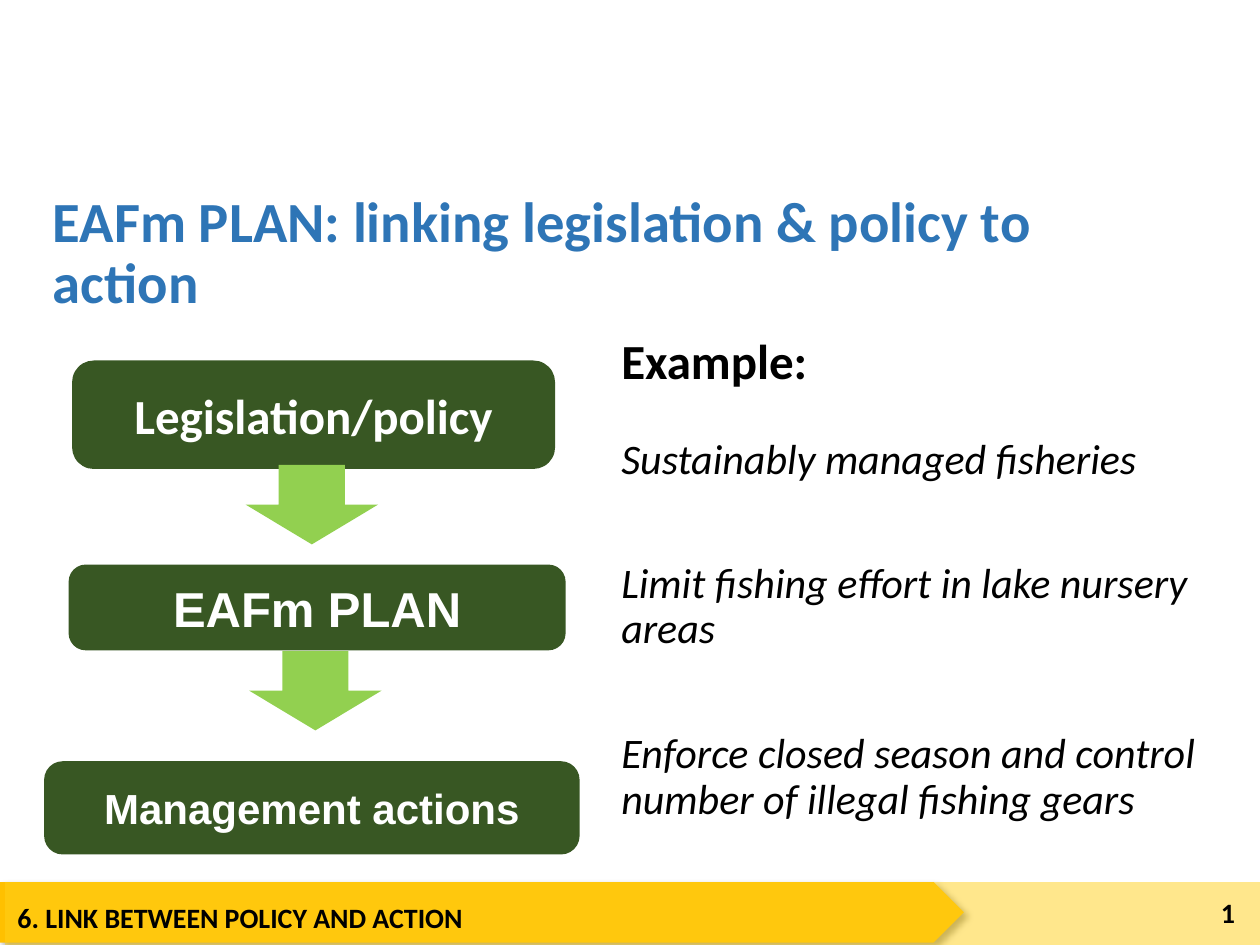
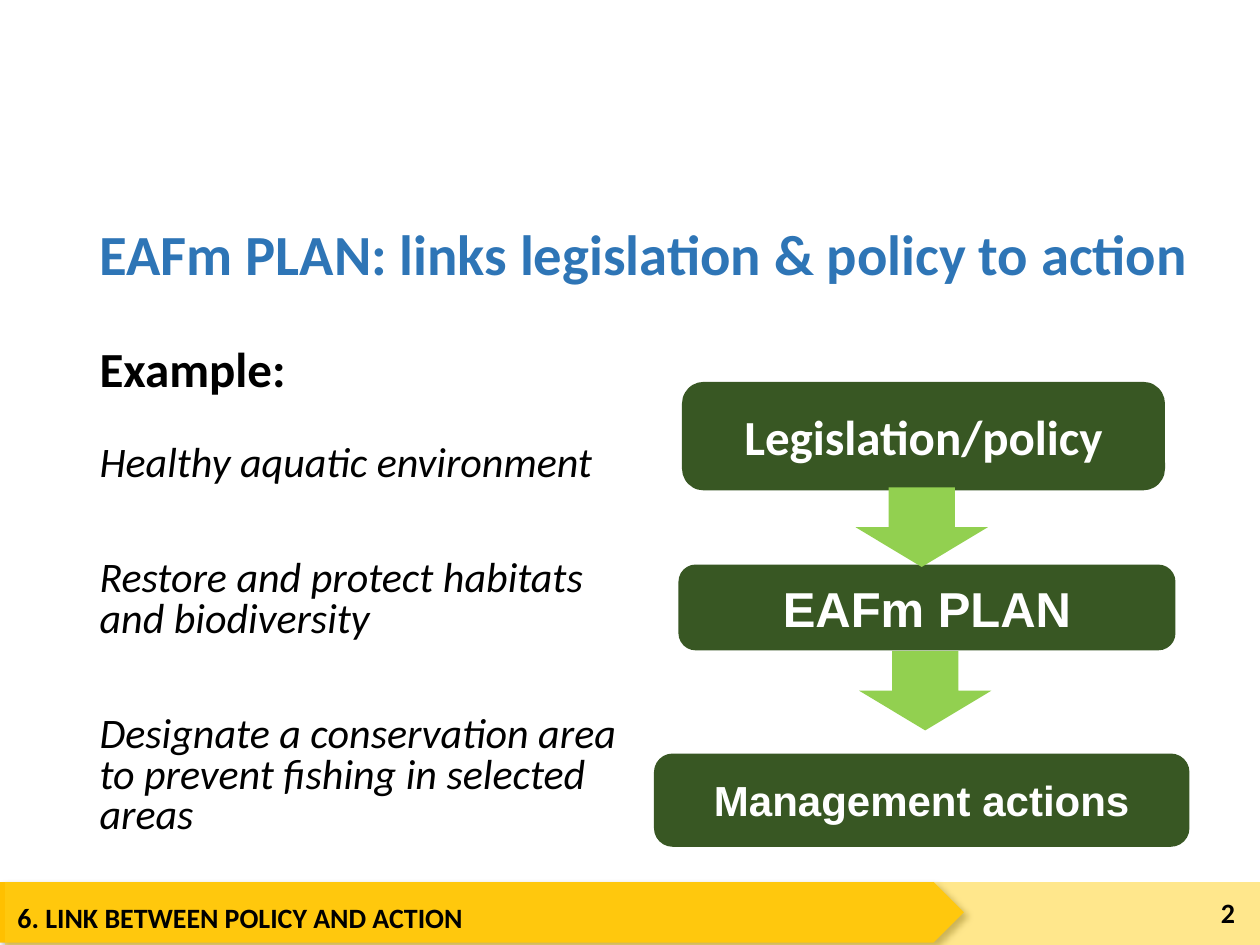
from dataclasses import dataclass
from typing import NamedTuple

from lxml import etree
from pptx import Presentation
from pptx.dml.color import RGBColor
from pptx.enum.shapes import MSO_SHAPE as Preset
from pptx.enum.text import MSO_ANCHOR as Anchor, MSO_AUTO_SIZE as AutoSize, PP_ALIGN as Align
from pptx.oxml import parse_xml
from pptx.oxml.ns import nsdecls, qn
from pptx.shapes.autoshape import Shape
from pptx.slide import Slide
from pptx.text.text import Font
from pptx.util import Pt


@dataclass(frozen=True)
class Theme:
    font: str = "Calibri"
    label_font: str = "Arial"
    title: str = "2E75B6"
    text: str = "000000"
    label: str = "FFFFFF"
    box: str = "385723"
    arrow: str = "92D050"
    band: str = "FFC000"
    band_tint: str = "FFD01B"
    title_size: float = 32.4
    heading_size: float = 28
    body_size: float = 24
    footer_size: float = 16


THEME = Theme()
FOOTER = "6. LINK BETWEEN POLICY AND ACTION"
ARROW_WIDTH, ARROW_HEIGHT = 75.6, 45.4


class Box(NamedTuple):
    left: float
    top: float
    width: float
    height: float


class Stage(NamedTuple):
    label: str
    indent: float
    width: float
    height: float
    font: str
    size: float


STAGES = (
    Stage("Legislation/policy", 16, 276, 62, THEME.font, THEME.heading_size),
    Stage("EAFm PLAN", 14, 284, 49, THEME.label_font, THEME.heading_size),
    Stage("Management actions", 0, 306, 53.3, THEME.label_font, THEME.body_size),
)


@dataclass(frozen=True)
class LinkSlide:
    title: str
    title_box: Box
    examples: tuple[str, ...]
    body_box: Box
    lead_spacing: float
    line_spacing: float
    example_gap: float
    flow_left: float
    stage_tops: tuple[float, ...]
    arrow_tops: tuple[float, ...]


SLIDES = (
    LinkSlide(
        title="EAFm PLAN: linking legislation & policy to action",
        title_box=Box(23, 116, 660, 59),
        examples=(
            "Sustainably managed fisheries",
            "Limit fishing effort in lake nursery areas",
            "Enforce closed season and control number of illegal fishing gears",
        ),
        body_box=Box(347.8, 168.5, 351.4, 338.4),
        lead_spacing=1.5, line_spacing=0.9, example_gap=45.5,
        flow_left=25.2, stage_tops=(206, 322.6, 435), arrow_tops=(265.7, 372),
    ),
    LinkSlide(
        title="EAFm PLAN: links legislation & policy to action",
        title_box=Box(49.7, 117.4, 648.7, 59),
        examples=(
            "Healthy aquatic environment",
            "Restore and protect habitats and biodiversity",
            "Designate a conservation area to prevent fishing in selected areas",
        ),
        body_box=Box(49.7, 176.4, 326.2, 320.4),
        lead_spacing=1.4, line_spacing=0.8, example_gap=43,
        flow_left=373.7, stage_tops=(218.2, 322.6, 430.6), arrow_tops=(278.6, 372),
    ),
)


def style(font: Font, size: float, color: str, name: str = THEME.font,
          bold: bool = True, italic: bool = False) -> None:
    font.name, font.size, font.bold, font.italic = name, Pt(size), bold, italic
    font.color.rgb = RGBColor.from_string(color)


def place(shape: Shape, box: Box) -> None:
    shape.left, shape.top, shape.width, shape.height = map(Pt, box)


def add_block(slide: Slide, preset: Preset, box: Box, color: str) -> Shape:
    """Add a flat filled shape without line or shadow."""
    shape = slide.shapes.add_shape(preset, *map(Pt, box))
    shape.fill.solid()
    shape.fill.fore_color.rgb = RGBColor.from_string(color)
    shape.line.fill.background()
    shape.shadow.inherit = False
    return shape


def add_text_box(slide: Slide, box: Box) -> Shape:
    shape = slide.shapes.add_textbox(*map(Pt, box))
    shape.text_frame.word_wrap = True
    return shape


def add_footer(slide: Slide, number: int) -> None:
    band = add_block(slide, Preset.PENTAGON, Box(0, 504, 550.8, 34.6), THEME.band)
    effects = band._element.spPr.find(qn("a:effectLst"))
    effects.append(parse_xml(
        f'<a:outerShdw {nsdecls("a")} blurRad="{Pt(4)}" dist="{Pt(3)}" dir="2700000">'
        '<a:srgbClr val="000000"><a:alpha val="40000"/></a:srgbClr></a:outerShdw>'))

    tint = add_block(slide, Preset.RECTANGLE, Box(2.9, 504, 717.1, 38), THEME.band_tint)
    color = tint._element.spPr.find(qn("a:solidFill"))[0]
    etree.SubElement(color, qn("a:alpha"), val="50000")

    section = add_text_box(slide, Box(2.9, 511.2, 529.2, 29.5))
    section.text_frame.text = FOOTER
    style(section.text_frame.paragraphs[0].runs[0].font, THEME.footer_size, THEME.text)

    page = add_text_box(slide, Box(660.2, 506.9, 52.6, 28.8))
    page.text_frame.vertical_anchor = Anchor.MIDDLE
    paragraph = page.text_frame.paragraphs[0]
    paragraph.alignment = Align.RIGHT
    run = paragraph.add_run()
    run.text = str(number)
    style(run.font, THEME.footer_size, THEME.text)
    # A slide number field shares the content of a run.
    field = run._r
    field.tag = qn("a:fld")
    field.set("id", "{B6F15528-21DE-4FAA-801E-634DDDAF4B2B}")
    field.set("type", "slidenum")


def fill_title(slide: Slide, content: LinkSlide) -> None:
    title = slide.shapes.title
    place(title, content.title_box)
    frame = title.text_frame
    frame.text = content.title
    frame.auto_size = AutoSize.NONE
    frame.vertical_anchor = Anchor.MIDDLE
    paragraph = frame.paragraphs[0]
    paragraph.alignment, paragraph.line_spacing = Align.LEFT, 0.9
    style(paragraph.runs[0].font, THEME.title_size, THEME.title)


def fill_examples(slide: Slide, content: LinkSlide) -> None:
    body = slide.placeholders[1]
    place(body, content.body_box)
    frame = body.text_frame
    frame.text = "\n".join(("Example:", *content.examples))
    frame.auto_size = AutoSize.NONE
    for index, paragraph in enumerate(frame.paragraphs):
        properties = paragraph._p.get_or_add_pPr()
        properties.set("marL", "0")
        properties.set("indent", "0")
        etree.SubElement(properties, qn("a:buNone"))
        is_heading, is_lead = index == 0, index < 2
        paragraph.line_spacing = content.lead_spacing if is_lead else content.line_spacing
        paragraph.space_before = Pt(0 if is_heading else 10 if is_lead else content.example_gap)
        style(paragraph.runs[0].font, THEME.heading_size if is_heading else THEME.body_size,
              THEME.text, bold=is_heading, italic=not is_heading)


def add_flow(slide: Slide, content: LinkSlide) -> None:
    """Draw the stages, then the arrows leading down from each but the last."""
    for stage, top in zip(STAGES, content.stage_tops):
        box = Box(content.flow_left + stage.indent, top, stage.width, stage.height)
        shape = add_block(slide, Preset.ROUNDED_RECTANGLE, box, THEME.box)
        shape.adjustments[0] = 0.2
        frame = shape.text_frame
        frame.text = stage.label
        frame.vertical_anchor = Anchor.MIDDLE
        paragraph = frame.paragraphs[0]
        paragraph.alignment = Align.CENTER
        style(paragraph.runs[0].font, stage.size, THEME.label, stage.font)
    for stage, top in zip(STAGES, content.arrow_tops):
        left = content.flow_left + stage.indent + (stage.width - ARROW_WIDTH) / 2 - 1
        add_block(slide, Preset.DOWN_ARROW, Box(left, top, ARROW_WIDTH, ARROW_HEIGHT),
                  THEME.arrow)


def main() -> None:
    presentation = Presentation()
    presentation.slide_width, presentation.slide_height = Pt(720), Pt(540)
    for number, content in enumerate(SLIDES, start=5):
        slide = presentation.slides.add_slide(presentation.slide_layouts[1])
        add_footer(slide, number)
        fill_title(slide, content)
        fill_examples(slide, content)
        add_flow(slide, content)
    presentation.save("out.pptx")


if __name__ == "__main__":
    main()
